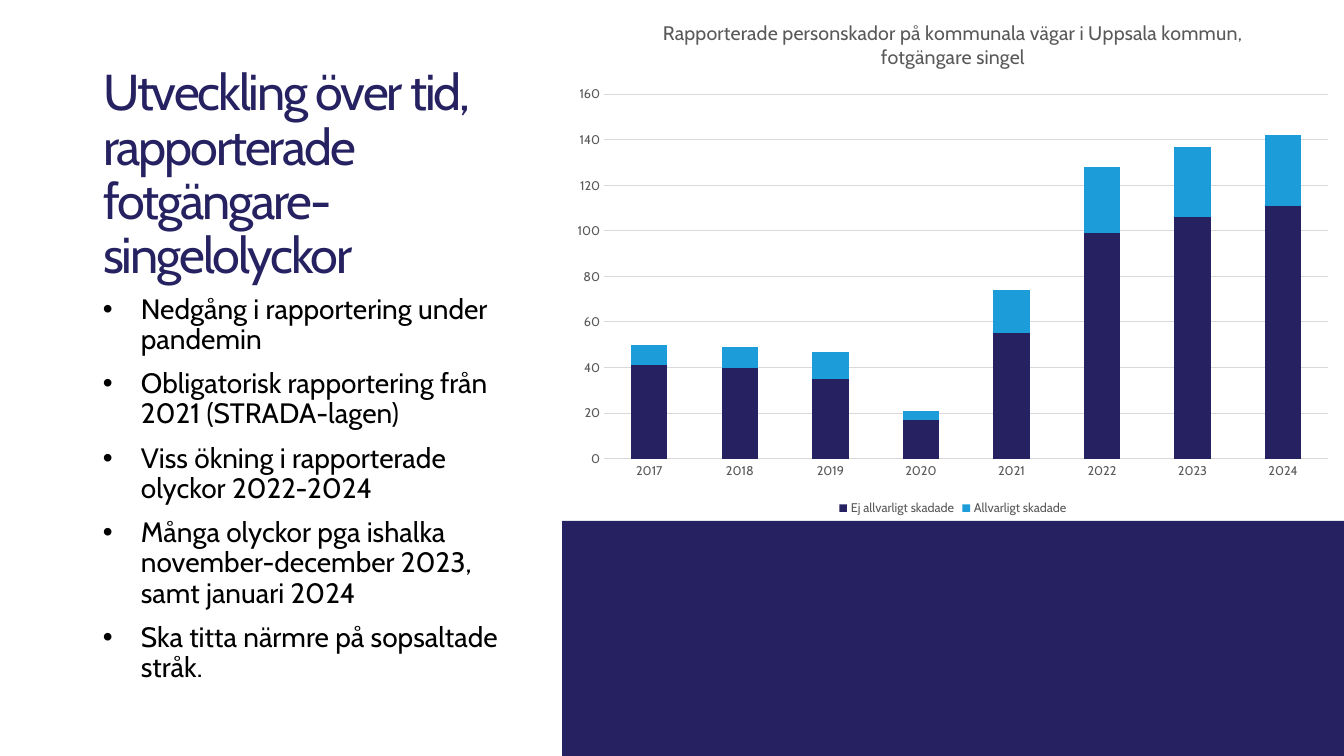
from dataclasses import dataclass

from lxml.etree import SubElement
from pptx import Presentation
from pptx.chart.data import CategoryChartData
from pptx.dml.color import RGBColor
from pptx.enum.chart import XL_CHART_TYPE, XL_LEGEND_POSITION, XL_TICK_MARK
from pptx.enum.shapes import MSO_SHAPE
from pptx.enum.text import MSO_ANCHOR, MSO_AUTO_SIZE, PP_ALIGN
from pptx.oxml.ns import qn
from pptx.util import Pt

# Content
HEADING = "Utveckling över tid, rapporterade fotgängare-singelolyckor"
POINTS = [
    "Nedgång i rapportering under pandemin",
    "Obligatorisk rapportering från 2021 (STRADA-lagen)",
    "Viss ökning i rapporterade olyckor 2022-2024",
    "Många olyckor pga ishalka november-december 2023, samt januari 2024",
    "Ska titta närmre på sopsaltade stråk.",
]
CHART_TITLE = "Rapporterade personskador på kommunala vägar i Uppsala kommun, fotgängare singel"
YEARS = [str(year) for year in range(2017, 2025)]
INJURIES = {
    "Ej allvarligt skadade": (41, 40, 35, 17, 55, 99, 106, 111),
    "Allvarligt skadade": (9, 9, 12, 4, 19, 29, 31, 31),
}


@dataclass(frozen=True)
class Theme:
    font: str = "Cabin"
    navy: str = "262261"
    blue: str = "1C9CD9"
    black: str = "000000"
    grey: str = "595959"
    rule: str = "D9D9D9"
    heading: int = 36
    body: int = 20
    chart_title: int = 14
    chart_label: int = 9


THEME = Theme()

# Layout in px
SCALE = 914400 / 100.8
WIDTH, HEIGHT = 1344, 756
LEFT, COLUMN = 93, 422
HEADING_TOP, POINTS_TOP, POINTS_HEIGHT = 132, 290, 390
SPLIT_X, SPLIT_Y = 562, 521
INDENT = 38


def px(length):
    return round(length * SCALE)


def box(*lengths):
    return [px(length) for length in lengths]


def style(font, size, color):
    font.name, font.size, font.bold = THEME.font, Pt(size), False
    font.color.rgb = RGBColor.from_string(color)


def add_bullet(paragraph):
    properties = paragraph._p.get_or_add_pPr()
    properties.set("marL", str(px(INDENT)))
    properties.set("indent", str(-px(INDENT)))
    SubElement(properties, qn("a:buFont")).set("typeface", "Arial")
    SubElement(properties, qn("a:buChar")).set("char", "•")


def rule_line(line):
    line.color.rgb = RGBColor.from_string(THEME.rule)
    line.width = Pt(0.75)


def add_panel(slide):
    panel = slide.shapes.add_shape(
        MSO_SHAPE.RECTANGLE, *box(SPLIT_X, SPLIT_Y, WIDTH - SPLIT_X, HEIGHT - SPLIT_Y))
    panel.shadow.inherit = False
    panel.fill.solid()
    panel.fill.fore_color.rgb = RGBColor.from_string(THEME.navy)
    panel.line.fill.background()


def add_heading(slide):
    heading = slide.shapes.title
    heading.left, heading.top, heading.width, heading.height = box(
        LEFT, HEADING_TOP, COLUMN, POINTS_TOP - HEADING_TOP)
    frame = heading.text_frame
    frame.word_wrap, frame.auto_size = True, MSO_AUTO_SIZE.NONE
    frame.vertical_anchor = MSO_ANCHOR.BOTTOM
    paragraph = frame.paragraphs[0]
    paragraph.alignment, paragraph.line_spacing = PP_ALIGN.LEFT, 0.9
    run = paragraph.add_run()
    run.text = HEADING
    style(run.font, THEME.heading, THEME.navy)
    run._r.get_or_add_rPr().set("spc", "-150")


def add_points(slide):
    frame = slide.shapes.add_textbox(
        *box(LEFT, POINTS_TOP, COLUMN, POINTS_HEIGHT)).text_frame
    frame.word_wrap = True
    for index, point in enumerate(POINTS):
        paragraph = frame.paragraphs[0] if index == 0 else frame.add_paragraph()
        add_bullet(paragraph)
        paragraph.line_spacing = 0.9
        if index:
            paragraph.space_before = Pt(10)
        run = paragraph.add_run()
        run.text = point
        style(run.font, THEME.body, THEME.black)


def add_injury_chart(slide):
    injuries = CategoryChartData()
    injuries.categories = YEARS
    for severity, counts in INJURIES.items():
        injuries.add_series(severity, counts)
    chart = slide.shapes.add_chart(
        XL_CHART_TYPE.COLUMN_STACKED, *box(SPLIT_X, 0, WIDTH - SPLIT_X, SPLIT_Y - 1),
        injuries).chart
    style(chart.font, THEME.chart_label, THEME.grey)

    # Title and legend
    chart.has_title = True
    run = chart.chart_title.text_frame.paragraphs[0].add_run()
    run.text = CHART_TITLE
    style(run.font, THEME.chart_title, THEME.grey)
    chart.chart_title.include_in_layout = False
    chart.has_legend = True
    chart.legend.position = XL_LEGEND_POSITION.BOTTOM
    chart.legend.include_in_layout = False
    style(chart.legend.font, THEME.chart_label, THEME.grey)

    # Axes
    years, count = chart.category_axis, chart.value_axis
    for axis in (years, count):
        axis.major_tick_mark = axis.minor_tick_mark = XL_TICK_MARK.NONE
        style(axis.tick_labels.font, THEME.chart_label, THEME.grey)
    rule_line(years.format.line)
    count.format.line.fill.background()
    rule_line(count.major_gridlines.format.line)
    count.minimum_scale, count.maximum_scale, count.major_unit = 0, 160, 20

    # Columns
    plot = chart.plots[0]
    plot.gap_width, plot.overlap, plot.vary_by_categories = 150, 100, False
    for series, color in zip(plot.series, (THEME.navy, THEME.blue)):
        series.format.fill.solid()
        series.format.fill.fore_color.rgb = RGBColor.from_string(color)


def main():
    deck = Presentation()
    deck.slide_width, deck.slide_height = box(WIDTH, HEIGHT)
    slide = deck.slides.add_slide(deck.slide_layouts.get_by_name("Title Only"))
    add_panel(slide)
    add_heading(slide)
    add_points(slide)
    add_injury_chart(slide)
    deck.save("out.pptx")


if __name__ == "__main__":
    main()
